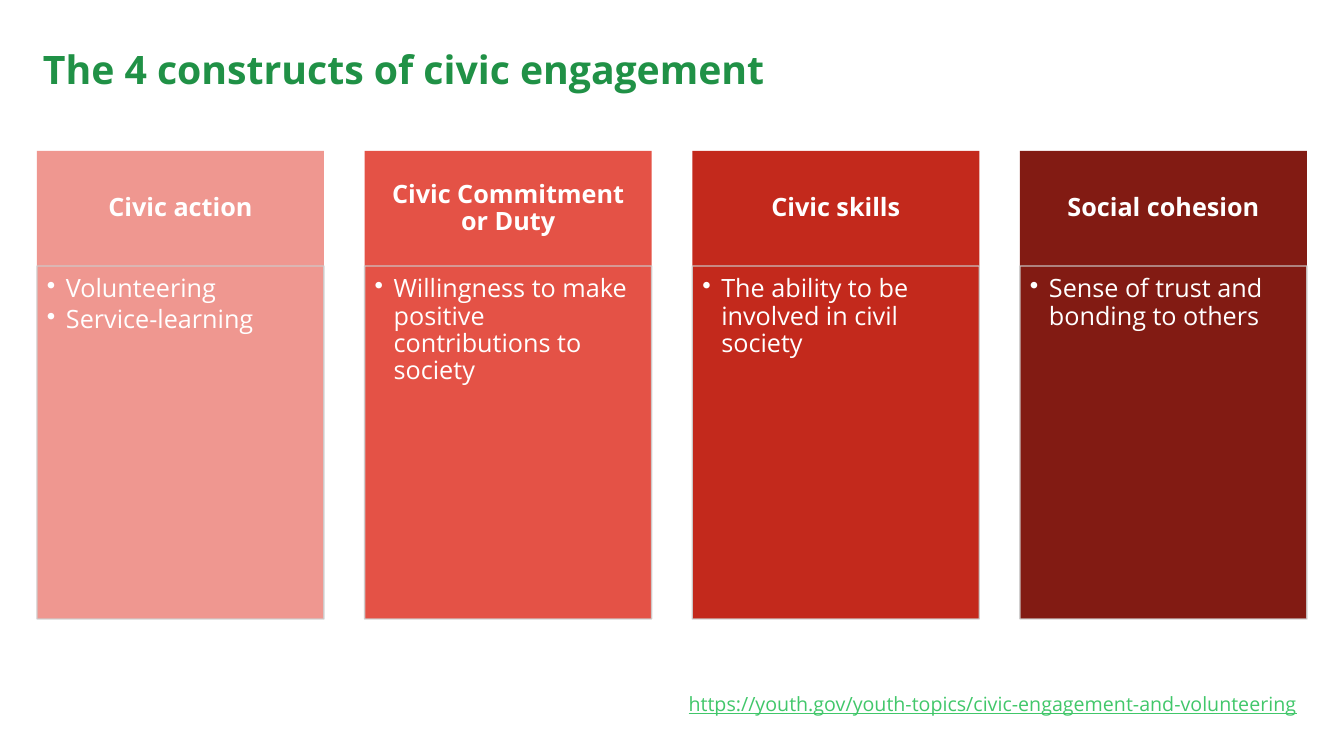
"""Build a slide on the four constructs of civic engagement."""
from lxml.etree import SubElement
from pptx import Presentation
from pptx.dml.color import RGBColor
from pptx.enum.shapes import MSO_SHAPE as SHAPE
from pptx.enum.text import MSO_ANCHOR as ANCHOR, PP_ALIGN as ALIGN
from pptx.oxml.ns import qn
from pptx.util import Pt

TITLE = "The 4 constructs of civic engagement"
LINK = "https://youth.gov/youth-topics/civic-engagement-and-volunteering"
CARDS = [
    ("Civic action", "EF9790", ["Volunteering", "Service-learning"]),
    ("Civic Commitment or Duty", "E45246",
     ["Willingness to make positive contributions to society"]),
    ("Civic skills", "C3291C", ["The ability to be involved in civil society"]),
    ("Social cohesion", "821B13", ["Sense of trust and bonding to others"]),
]
FONT = "Open Sans"
WHITE, GREEN, LIME, GREY = "FFFFFF", "209146", "41C76A", "CECECE"
LEFT, RIGHT, TOP = 37, 1307, 151
WIDTH, HEAD, BODY = 287, 115, 353
STEP = (RIGHT - LEFT - WIDTH) / (len(CARDS) - 1)


def px(size):
    return round(size * 914400 / 100.8)


def color(code):
    return RGBColor.from_string(code)


def write(shape, lines, size, code, pads, align=ALIGN.LEFT, anchor=ANCHOR.TOP,
          bold=False, under=False, bullet=False, space=0.9, after=0):
    frame = shape.text_frame
    frame.text = "\n".join(lines)
    frame.word_wrap = True
    frame.vertical_anchor = anchor
    (frame.margin_left, frame.margin_top,
     frame.margin_right, frame.margin_bottom) = map(px, pads)
    for para in frame.paragraphs:
        para.alignment = align
        para.line_spacing = space
        para.space_after = Pt(after)
        if bullet:
            props = para._p.get_or_add_pPr()
            props.set("marL", str(px(19)))
            props.set("indent", str(px(-19)))
            SubElement(props, qn("a:buChar"), char="•")
        for run in para.runs:
            font = run.font
            font.name, font.size, font.bold = FONT, Pt(size), bold
            font.underline = under
            font.color.rgb = color(code)


def block(slide, x, y, high, fill, edge=None):
    shape = slide.shapes.add_shape(
        SHAPE.RECTANGLE, px(x), px(y), px(WIDTH), px(high))
    shape.shadow.inherit = False
    shape.fill.solid()
    shape.fill.fore_color.rgb = color(fill)
    if edge:
        shape.line.color.rgb = color(edge)
        shape.line.width = Pt(1)
        tone = shape.line._ln.find(".//" + qn("a:srgbClr"))
        SubElement(tone, qn("a:alpha"), val="90000")
    else:
        shape.line.fill.background()
    return shape


def label(slide, x, y, wide, high):
    return slide.shapes.add_textbox(px(x), px(y), px(wide), px(high))


def main():
    deck = Presentation()
    deck.slide_width, deck.slide_height = px(1344), px(756)
    slide = deck.slides.add_slide(deck.slide_layouts[6])
    write(label(slide, LEFT, 32, RIGHT - LEFT, 79), [TITLE], 28, GREEN,
          (6, 6, 6, 6), anchor=ANCHOR.MIDDLE, bold=True)
    for index, (name, fill, points) in enumerate(CARDS):
        x = LEFT + index * STEP
        head = block(slide, x, TOP, HEAD, fill)
        write(head, [name], 18, WHITE, (14, 8, 14, 8), ALIGN.CENTER,
              ANCHOR.MIDDLE, bold=True)
        body = block(slide, x, TOP + HEAD, BODY, fill, GREY)
        write(body, points, 18, WHITE, (10, 10, 14, 15), bullet=True, after=2.7)
    write(label(slide, 483, 687, RIGHT - 483, 57), [LINK], 14, LIME,
          (10, 5, 10, 5), ALIGN.RIGHT, under=True, space=1.0)
    deck.save("out.pptx")


if __name__ == "__main__":
    main()
